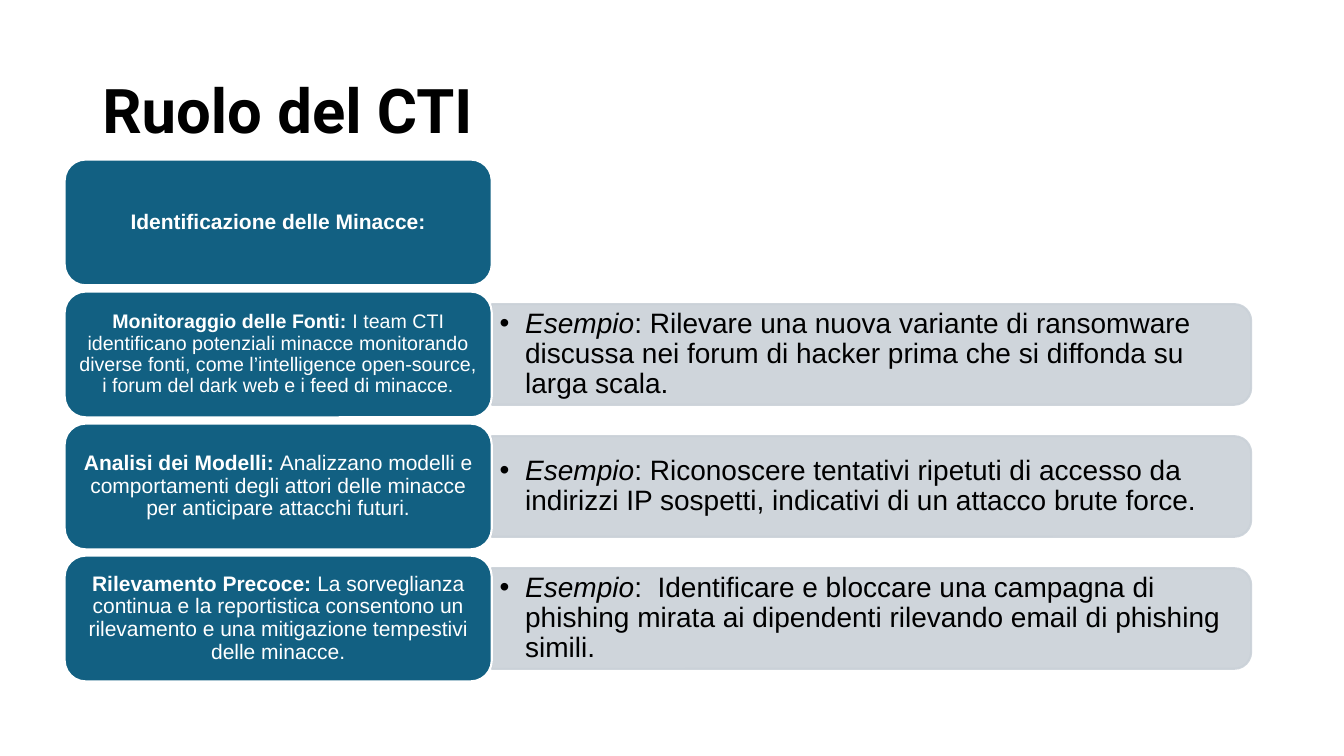
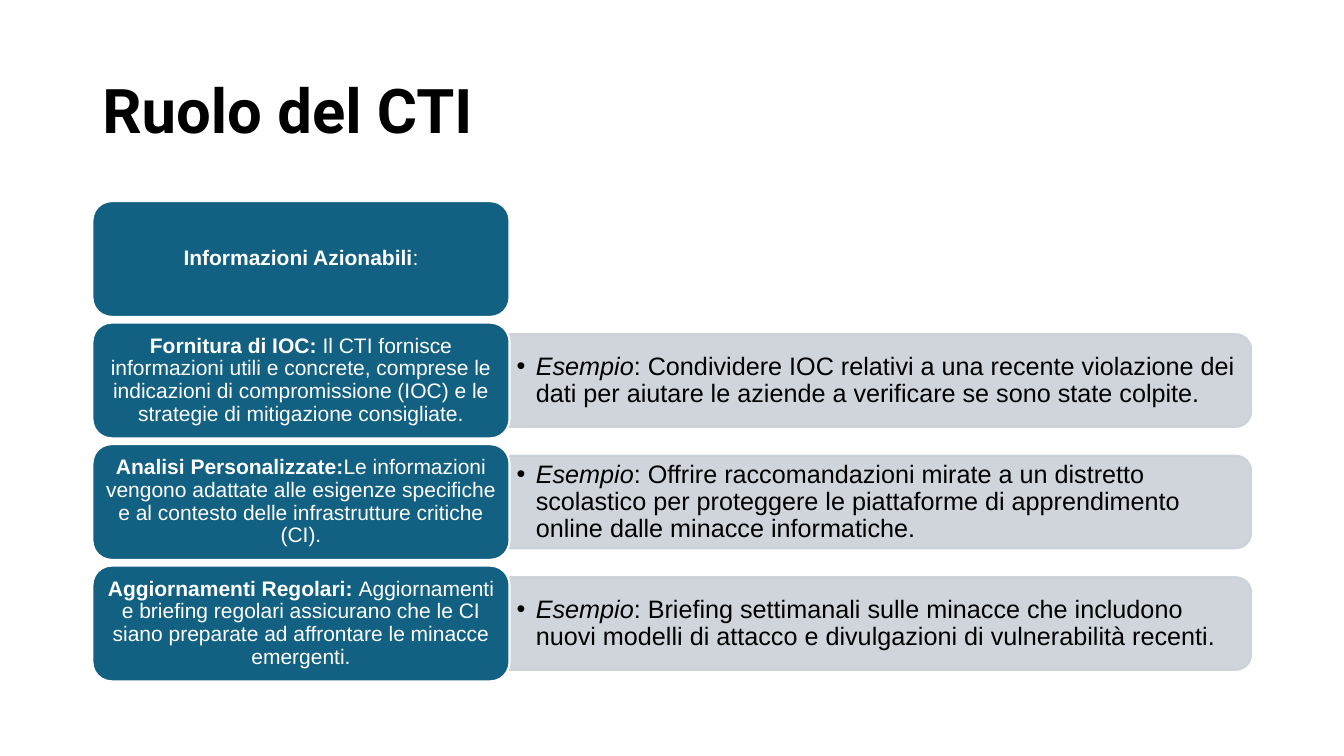
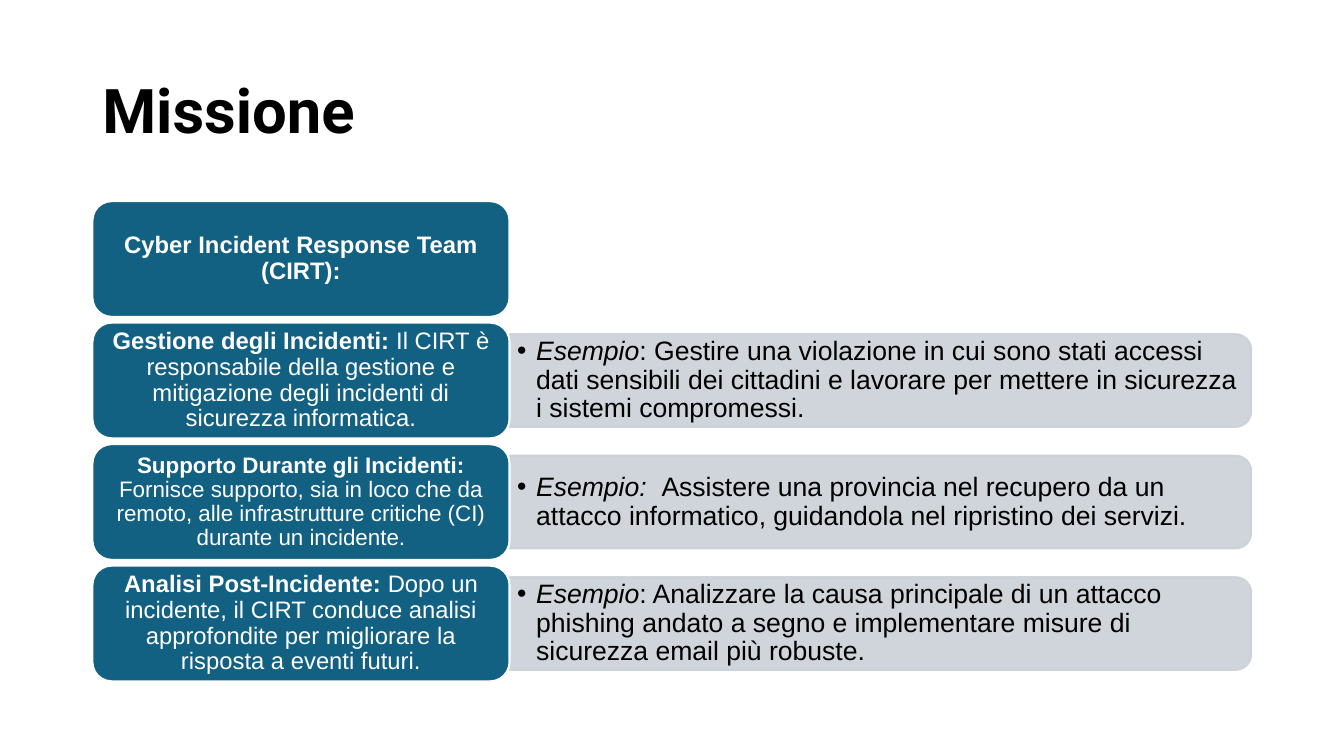
from lxml import etree
from pptx import Presentation
from pptx.dml.color import RGBColor
from pptx.enum.shapes import MSO_SHAPE
from pptx.enum.text import MSO_ANCHOR, PP_ALIGN
from pptx.oxml.ns import qn
from pptx.util import Cm, Pt

ROUNDED = MSO_SHAPE.ROUNDED_RECTANGLE
TOP_ROUNDED = MSO_SHAPE.ROUND_2_SAME_RECTANGLE
MIDDLE = MSO_ANCHOR.MIDDLE
LEFT, CENTER = PP_ALIGN.LEFT, PP_ALIGN.CENTER

COLORS = {"label": "126082", "bar": "CAD1D8", "white": "FFFFFF", "black": "000000"}

# Shared layout, in centimetres
RIGHT_EDGE = 31.53
BOTTOM_EDGE = 17.17
ROW_COUNT = 4
GAP_SHARE = 0.05     # gap between rows, as a share of the label height
LABEL_SHARE = 0.36   # label width, as a share of the row width
BAR_SHARE = 0.8      # bar height, as a share of the label height
CORNER = 0.167

# Each row: label size, bold lead, label text, italic lead, example text
SLIDES = [
    {"title": "Ruolo del CTI", "left": 1.63, "top": 4.02, "example_size": 20, "indent": 0.64,
     "rows": [
         (15, "Identificazione delle Minacce:", "", "", ""),
         (14, "Monitoraggio delle Fonti: ",
          "I team CTI identificano potenziali minacce monitorando diverse fonti, come "
          "l’intelligence open-source, i forum del dark web e i feed di minacce.",
          "Esempio", ": Rilevare una nuova variante di ransomware discussa nei forum di "
          "hacker prima che si diffonda su larga scala."),
         (15, "Analisi dei Modelli: ",
          "Analizzano modelli e comportamenti degli attori delle minacce per anticipare "
          "attacchi futuri.",
          "Esempio", ": Riconoscere tentativi ripetuti di accesso da indirizzi IP sospetti, "
          "indicativi di un attacco brute force."),
         (15, "Rilevamento Precoce: ",
          "La sorveglianza continua e la reportistica consentono un rilevamento e una "
          "mitigazione tempestivi delle minacce.",
          "Esempio", ":  Identificare e bloccare una campagna di phishing mirata ai "
          "dipendenti rilevando email di phishing simili."),
     ]},
    {"title": "Ruolo del CTI", "left": 2.33, "top": 5.07, "example_size": 18, "indent": 0.48,
     "rows": [
         (15, "Informazioni Azionabili", ":", "", ""),
         (15, "Fornitura di IOC: ",
          "Il CTI fornisce informazioni utili e concrete, comprese le indicazioni di "
          "compromissione (IOC) e le strategie di mitigazione consigliate.",
          "Esempio", ": Condividere IOC relativi a una recente violazione dei dati per "
          "aiutare le aziende a verificare se sono state colpite."),
         (15, "Analisi Personalizzate:",
          "Le informazioni vengono adattate alle esigenze specifiche e al contesto delle "
          "infrastrutture critiche (CI).",
          "Esempio", ": Offrire raccomandazioni mirate a un distretto scolastico per "
          "proteggere le piattaforme di apprendimento online dalle minacce informatiche."),
         (15, "Aggiornamenti Regolari: ",
          "Aggiornamenti e briefing regolari assicurano che le CI siano preparate ad "
          "affrontare le minacce emergenti.",
          "Esempio", ": Briefing settimanali sulle minacce che includono nuovi modelli di "
          "attacco e divulgazioni di vulnerabilità recenti."),
     ]},
    {"title": "Missione", "left": 2.33, "top": 5.07, "example_size": 19, "indent": 0.48,
     "rows": [
         (17, "Cyber Incident Response Team (CIRT):", "", "", ""),
         (17, "Gestione degli Incidenti: ",
          "Il CIRT è responsabile della gestione e mitigazione degli incidenti di "
          "sicurezza informatica.",
          "Esempio", ": Gestire una violazione in cui sono stati accessi dati sensibili dei "
          "cittadini e lavorare per mettere in sicurezza i sistemi compromessi."),
         (16, "Supporto Durante gli Incidenti: ",
          "Fornisce supporto, sia in loco che da remoto, alle infrastrutture critiche (CI) "
          "durante un incidente.",
          "Esempio:  ", "Assistere una provincia nel recupero da un attacco informatico, "
          "guidandola nel ripristino dei servizi."),
         (17, "Analisi Post-Incidente: ",
          "Dopo un incidente, il CIRT conduce analisi approfondite per migliorare la "
          "risposta a eventi futuri.",
          "Esempio", ": Analizzare la causa principale di un attacco phishing andato a segno "
          "e implementare misure di sicurezza email più robuste."),
     ]},
]


def write(shape, lead, rest, size, color, align=LEFT, font="Arial", inset=None, indent=0):
    """Fill a shape with one paragraph; a bulleted one has an italic lead, others a bold one."""
    frame = shape.text_frame
    frame.word_wrap = True
    frame.vertical_anchor = MIDDLE
    inset = inset or size / 100
    frame.margin_left = frame.margin_right = Cm(inset)
    frame.margin_top = frame.margin_bottom = Cm(inset / 2)
    paragraph = frame.paragraphs[0]
    paragraph.alignment = align
    paragraph.line_spacing = 0.9
    if indent:
        properties = paragraph._p.get_or_add_pPr()
        properties.set("marL", str(Cm(indent)))
        properties.set("indent", str(-Cm(indent)))
        etree.SubElement(properties, qn("a:buFont"), typeface="Arial")
        etree.SubElement(properties, qn("a:buChar"), char="•")
    paragraph.font.name = font
    paragraph.font.size = Pt(size)
    paragraph.font.color.rgb = RGBColor.from_string(COLORS[color])
    lead_run = paragraph.add_run()
    lead_run.text = lead
    if indent:
        lead_run.font.italic = True
    else:
        lead_run.font.bold = True
    if rest:
        paragraph.add_run().text = rest


def add_panel(slide, preset, box, fill, line, opacity=100):
    """Add a filled, outlined shape with rounded corners."""
    shape = slide.shapes.add_shape(preset, *[Cm(length) for length in box])
    shape.shadow.inherit = False
    shape.adjustments[0] = CORNER
    shape.line.width = Pt(1.5)
    for format_fill, color in ((shape.fill, fill), (shape.line.fill, line)):
        format_fill.solid()
        format_fill.fore_color.rgb = RGBColor.from_string(COLORS[color])
    if opacity < 100:
        for color_element in shape._element.spPr.iter(qn("a:srgbClr")):
            etree.SubElement(color_element, qn("a:alpha"), val=str(opacity * 1000))
    return shape


presentation = Presentation()
presentation.slide_width = Cm(33.87)
presentation.slide_height = Cm(19.05)
blank_layout = presentation.slide_layouts[6]

for content in SLIDES:
    slide = presentation.slides.add_slide(blank_layout)

    # Title
    title = slide.shapes.add_textbox(Cm(2.33), Cm(1.01), Cm(29.21), Cm(3.68))
    write(title, content["title"], "", 44, "black", font="Roboto", inset=0.25)

    # Row grid
    left, top = content["left"], content["top"]
    label_height = (BOTTOM_EDGE - top) / (ROW_COUNT + GAP_SHARE * (ROW_COUNT - 1))
    label_width = (RIGHT_EDGE - left) * LABEL_SHARE
    bar_left = left + label_width
    bar_width = RIGHT_EDGE - bar_left
    bar_height = label_height * BAR_SHARE

    for index, (size, lead, rest, example_lead, example) in enumerate(content["rows"]):
        row_top = top + index * label_height * (1 + GAP_SHARE)
        row_middle = row_top + label_height / 2

        # Example bar, turned so that its rounded end faces right
        if example:
            bar_box = (bar_left + (bar_width - bar_height) / 2, row_middle - bar_width / 2,
                       bar_height, bar_width)
            bar = add_panel(slide, TOP_ROUNDED, bar_box, "bar", "bar", opacity=90)
            bar.rotation = 90
            example_box = slide.shapes.add_textbox(
                Cm(bar_left), Cm(row_middle - bar_height * 0.45),
                Cm(bar_width - bar_height * 0.05), Cm(bar_height * 0.9))
            write(example_box, example_lead, example, content["example_size"], "black",
                  indent=content["indent"])

        # Label
        label_box = (left, row_top, label_width, label_height)
        label = add_panel(slide, ROUNDED, label_box, "label", "white")
        write(label, lead, rest, size, "white", align=CENTER)

presentation.save("out.pptx")
